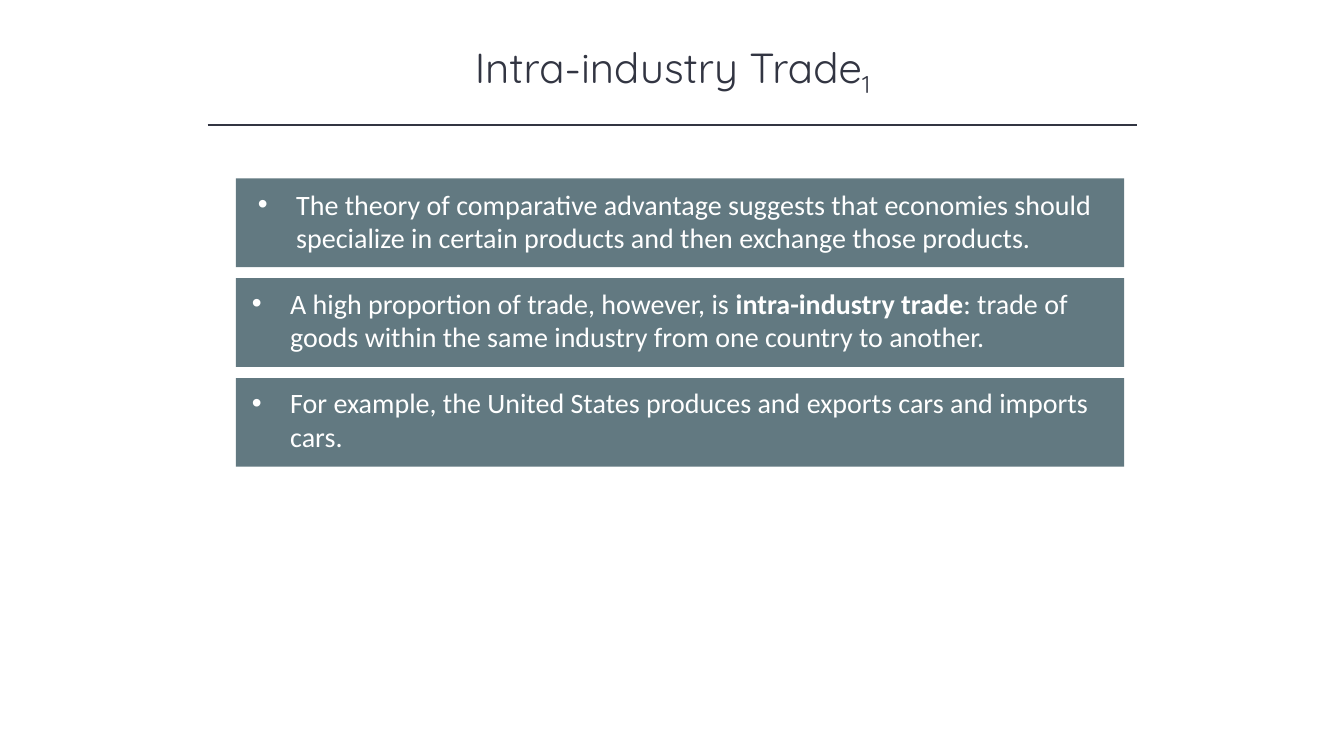
from lxml import etree
from pptx import Presentation
from pptx.dml.color import RGBColor
from pptx.enum.shapes import MSO_CONNECTOR, MSO_SHAPE
from pptx.enum.text import MSO_ANCHOR, PP_ALIGN
from pptx.oxml.ns import qn
from pptx.util import Inches, Pt

RECT = MSO_SHAPE.RECTANGLE
STRAIGHT = MSO_CONNECTOR.STRAIGHT
TOP, MIDDLE = MSO_ANCHOR.TOP, MSO_ANCHOR.MIDDLE
LEFT, CENTER = PP_ALIGN.LEFT, PP_ALIGN.CENTER

COLORS = {"ink": "323542", "panel": "627981", "white": "FFFFFF"}
PANEL_TOP, PANEL_STEP = 1.77, 0.99
POINTS = [
    (2.46, 0.04, [("The theory of comparative advantage suggests that economies should "
                   "specialize in certain products and then exchange those products.", False)]),
    (2.4, 0.03, [("A high proportion of trade, however, is ", False),
                 ("intra-industry trade", True),
                 (": trade of goods within the same industry from one country to another.", False)]),
    (2.4, 0.03, [("For example, the United States produces and exports cars and imports cars.",
                  False)]),
]


def rgb(name):
    """Return the named colour."""
    return RGBColor.from_string(COLORS[name])


def add_run(p, text, font, size, color, bold=False):
    """Append a formatted run to a paragraph."""
    r = p.add_run()
    r.text = text
    r.font.name = font
    r.font.size = Pt(size)
    r.font.bold = bold
    r.font.color.rgb = rgb(color)
    return r


def set_title(s, text, subscript):
    """Place the title and its subscript number."""
    title = s.shapes.title
    title.left, title.top = Inches(1.67), Inches(0.39)
    title.width, title.height = Inches(10), Inches(0.61)
    tf = title.text_frame
    tf.word_wrap = True
    tf.vertical_anchor = MIDDLE
    p = tf.paragraphs[0]
    p.alignment = CENTER
    add_run(p, text, "Quicksand", 30, "ink")
    r = add_run(p, subscript, "Quicksand", 30, "ink")
    r.font._element.set("baseline", "-25000")


def add_rule(s):
    """Draw the line below the title."""
    y = Inches(1.24)
    rule = s.shapes.add_connector(STRAIGHT, Inches(2.06), y, Inches(11.28), y)
    rule.line.color.rgb = rgb("ink")
    rule.line.width = Pt(1)
    etree.SubElement(rule._element.spPr, qn("a:effectLst"))


def add_panel(group, left, top, width, height):
    """Add a plain filled rectangle to a group."""
    sp = group.shapes.add_shape(RECT, Inches(left), Inches(top), Inches(width), Inches(height))
    sp.shadow.inherit = False
    sp.fill.solid()
    sp.fill.fore_color.rgb = rgb("panel")
    sp.line.fill.background()
    return sp


def set_bullet(p):
    """Give a paragraph a round bullet and a hanging indent."""
    pPr = p._p.get_or_add_pPr()
    pPr.set("marL", str(Inches(0.38)))
    pPr.set("indent", str(Inches(-0.38)))
    etree.SubElement(pPr, qn("a:buFont")).set("typeface", "Arial")
    etree.SubElement(pPr, qn("a:buChar")).set("char", "•")


def add_point(s, top, text_left, text_drop, parts):
    """Add one bulleted statement on its panel."""
    group = s.shapes.add_group_shape()
    add_panel(group, 2.34, top, 8.81, 0.88)
    sp = add_panel(group, text_left, top + text_drop, 8.54, 0.77)
    tf = sp.text_frame
    tf.word_wrap = True
    tf.vertical_anchor = TOP
    p = tf.paragraphs[0]
    p.alignment = LEFT
    set_bullet(p)
    for text, bold in parts:
        add_run(p, text, "Calibri", 20, "white", bold)


def main():
    """Build the slide and save it."""
    prs = Presentation()
    prs.slide_width, prs.slide_height = Inches(13.33), Inches(7.5)
    s = prs.slides.add_slide(prs.slide_layouts[5])
    set_title(s, "Intra-industry Trade", "1")
    add_rule(s)
    for i, (text_left, text_drop, parts) in enumerate(POINTS):
        add_point(s, PANEL_TOP + i * PANEL_STEP, text_left, text_drop, parts)
    prs.save("out.pptx")


if __name__ == "__main__":
    main()
